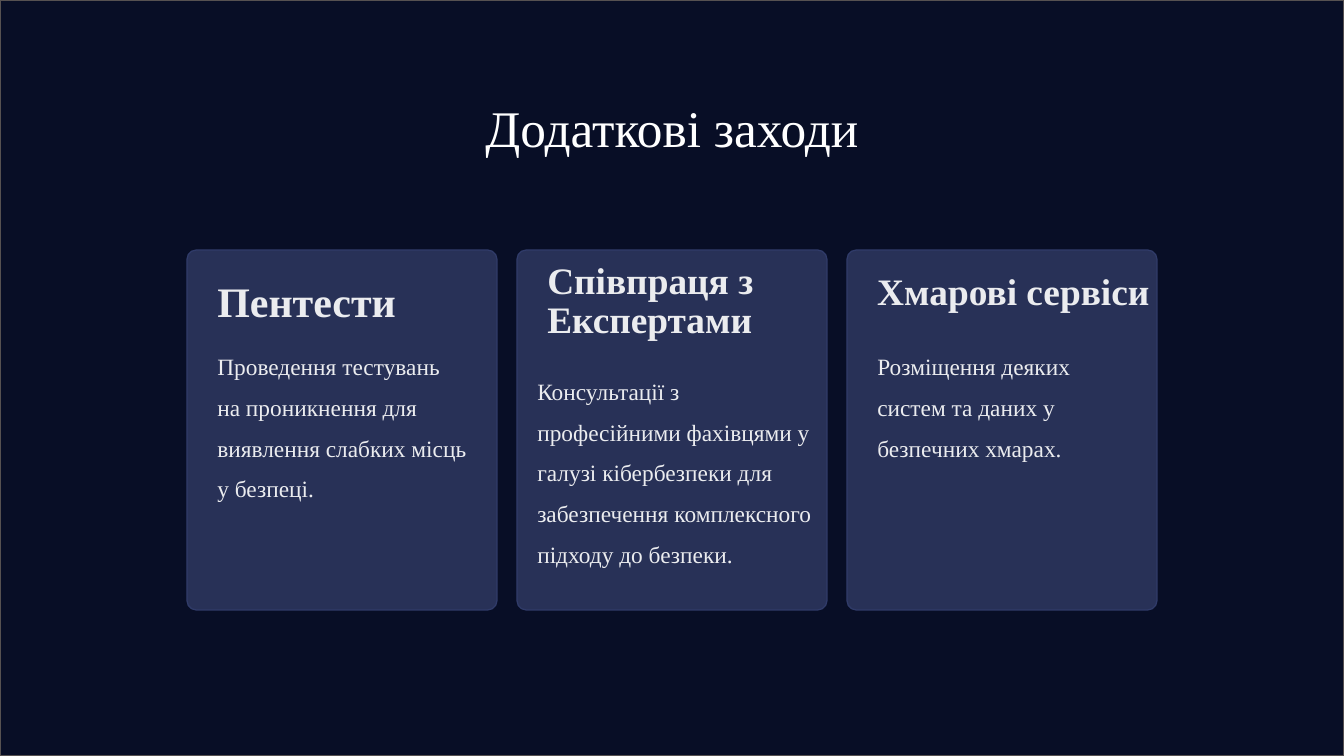
from pptx import Presentation
from pptx.dml.color import RGBColor
from pptx.enum.shapes import MSO_SHAPE
from pptx.enum.text import MSO_ANCHOR, MSO_AUTO_SIZE, PP_ALIGN
from pptx.util import Pt

RECTANGLE = MSO_SHAPE.RECTANGLE
ROUNDED = MSO_SHAPE.ROUNDED_RECTANGLE
TOP = MSO_ANCHOR.TOP
NO_AUTOFIT = MSO_AUTO_SIZE.NONE
LEFT, CENTER = PP_ALIGN.LEFT, PP_ALIGN.CENTER

NAVY = RGBColor(0x08, 0x0E, 0x26)
GREY = RGBColor(0x56, 0x51, 0x51)
CARD_FILL = RGBColor(0x28, 0x31, 0x57)
CARD_LINE = RGBColor(0x30, 0x3B, 0x69)
WHITE = RGBColor(0xFF, 0xFF, 0xFF)
PALE = RGBColor(0xEB, 0xEC, 0xEF)

FONT = "Times New Roman"
EMU_PER_PX = 914400 / 84
SLIDE_WIDTH, SLIDE_HEIGHT = 1344, 756
CARD_LEFT, CARD_TOP, CARD_WIDTH, CARD_HEIGHT = 187, 250, 310, 360
CARD_PITCH = 330
TEXT_INDENT = 22

# Heading and body boxes: (indent in card, top, width, height)
CARDS = [
    dict(heading="Пентести", heading_box=(TEXT_INDENT, 271, 266, 51),
         size=36, spacing=43.7, wrap=False,
         body="Проведення тестувань на проникнення для виявлення слабких місць у безпеці.",
         body_box=(TEXT_INDENT, 335, 266, 204)),
    dict(heading="Співпраця з Експертами", heading_box=(TEXT_INDENT, 260, 266, 76),
         size=32, spacing=32.8, wrap=True,
         body="Консультації з професійними фахівцями у галузі кібербезпеки "
              "для забезпечення комплексного підходу до безпеки.",
         body_box=(12, 360, 308, 228)),
    dict(heading="Хмарові сервіси", heading_box=(TEXT_INDENT, 271, 245, 39),
         size=32, spacing=32.8, wrap=False,
         body="Розміщення деяких систем та даних у безпечних хмарах.",
         body_box=(TEXT_INDENT, 335, 266, 163)),
]


def px(*lengths):
    return [round(length * EMU_PER_PX) for length in lengths]


def write(shape, text, *, size, spacing, color=PALE, bold=False, align=LEFT, wrap=True):
    frame = shape.text_frame
    frame.text = text
    frame.word_wrap = wrap
    frame.auto_size = NO_AUTOFIT
    frame.vertical_anchor = TOP
    paragraph = frame.paragraphs[0]
    paragraph.alignment = align
    paragraph.line_spacing = Pt(spacing)
    font = paragraph.runs[0].font
    font.name, font.size, font.bold = FONT, Pt(size), bold
    font.color.rgb = color


class SlideBuilder:
    def __init__(self, slide):
        self.slide = slide

    def title(self, text, box, **style):
        shape = self.slide.shapes.title
        shape.left, shape.top, shape.width, shape.height = px(*box)
        write(shape, text, **style)

    def panel(self, kind, box, fill, line):
        shape = self.slide.shapes.add_shape(kind, *px(*box))
        shape.shadow.inherit = False
        shape.fill.solid()
        shape.fill.fore_color.rgb = fill
        shape.line.color.rgb = line
        shape.line.width = Pt(1.09)
        return shape

    def text(self, text, box, **style):
        write(self.slide.shapes.add_textbox(*px(*box)), text, **style)

    def background(self):
        shape = self.panel(RECTANGLE, (0, 0, SLIDE_WIDTH, SLIDE_HEIGHT), NAVY, GREY)
        self.slide.shapes.title.element.addprevious(shape.element)

    def card(self, left, card):
        panel = self.panel(ROUNDED, (left, CARD_TOP, CARD_WIDTH, CARD_HEIGHT),
                           CARD_FILL, CARD_LINE)
        panel.adjustments[0] = 0.03
        indent, *rest = card["heading_box"]
        self.text(card["heading"], (left + indent, *rest), size=card["size"],
                  spacing=card["spacing"], bold=True, wrap=card["wrap"])
        indent, *rest = card["body_box"]
        self.text(card["body"], (left + indent, *rest), size=20, spacing=35)


def main():
    presentation = Presentation()
    presentation.slide_width, presentation.slide_height = px(SLIDE_WIDTH, SLIDE_HEIGHT)
    title_only = presentation.slide_layouts[5]
    builder = SlideBuilder(presentation.slides.add_slide(title_only))

    # Background and title
    builder.background()
    builder.title("Додаткові заходи", (454, 90, 436, 64), size=44, spacing=54.7,
                  color=WHITE, align=CENTER, wrap=False)

    # Three cards
    for index, card in enumerate(CARDS):
        builder.card(CARD_LEFT + index * CARD_PITCH, card)

    presentation.save("out.pptx")


if __name__ == "__main__":
    main()
